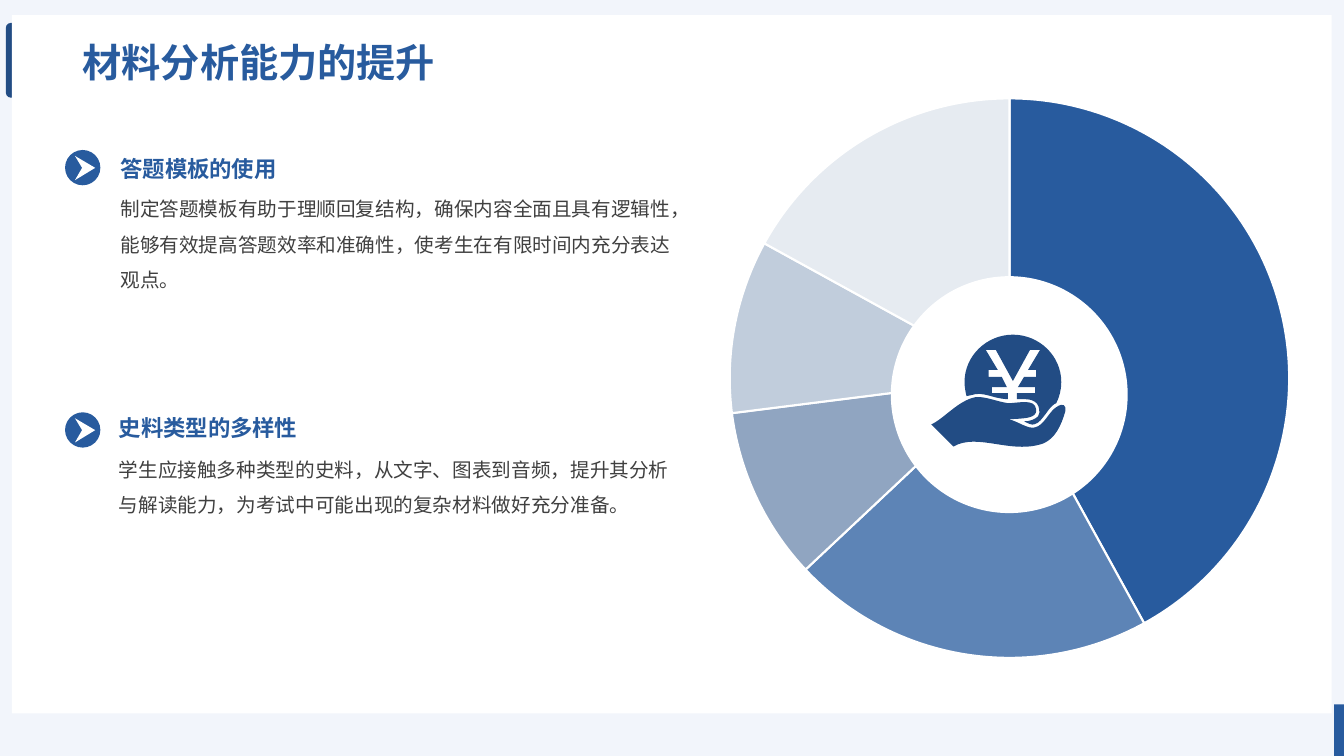
from dataclasses import dataclass

import lxml.etree
import pptx
import pptx.chart.data
import pptx.dml.color
import pptx.enum.chart
import pptx.enum.shapes
import pptx.enum.text
import pptx.oxml
import pptx.oxml.ns
import pptx.util

Cm = pptx.util.Cm
Pt = pptx.util.Pt
SHAPE = pptx.enum.shapes.MSO_SHAPE
qn = pptx.oxml.ns.qn


@dataclass(frozen=True)
class Theme:
    font: str = "Noto Sans CJK SC"
    chart_font: str = "Calibri"
    back: str = "F2F5FB"
    white: str = "FFFFFF"
    blue: str = "285B9E"
    navy: str = "224C84"
    text: str = "404040"
    black: str = "000000"
    title_size: int = 28
    heading_size: int = 16
    body_size: int = 14
    chart_size: int = 10


THEME = Theme()

# Value, colour and opacity in percent
SLICES = [
    (42, THEME.blue, 100),
    (21, THEME.blue, 75),
    (10, THEME.navy, 50),
    (10, THEME.navy, 28),
    (17, THEME.navy, 11),
]

# Left and top of the heading, top of the body, top of the badge, heading, body
TOPICS = [
    (2.78, 3.78, 4.55, 3.78, "答题模板的使用",
     "制定答题模板有助于理顺回复结构，确保内容全面且具有逻辑性，能够有效提高答题效率和准确性，使考生在有限时间内充分表达观点。"),
    (2.74, 10.31, 11.11, 10.39, "史料类型的多样性",
     "学生应接触多种类型的史料，从文字、图表到音频，提升其分析与解读能力，为考试中可能出现的复杂材料做好充分准备。"),
]

# Outlines in hundredths of an inch: a pair is a corner, six numbers are a curve
COIN = [
    (1030, 413), (1031, 411, 1032, 408, 1031, 406), (1030, 396, 1019, 396, 1016, 396),
    (1009, 396), (1009, 390), (1027, 390), (1027, 384), (1010, 384), (1016, 374),
    (1028, 374), (1028, 367), (1020, 367), (1032, 347), (1022, 347), (1005, 378),
    (988, 347), (978, 347), (990, 367), (981, 367), (981, 374), (994, 374),
    (999, 384), (984, 384), (984, 390), (1000, 390), (1000, 396),
    (996, 396, 991, 395, 987, 394), (980, 392, 973, 390, 968, 391),
    (965, 392, 962, 392, 959, 393), (958, 389, 957, 384, 957, 379),
    (957, 353, 979, 332, 1005, 332), (1031, 332, 1053, 353, 1053, 379),
    (1053, 387, 1051, 394, 1048, 400), (1047, 400, 1047, 401, 1046, 401),
    (1043, 403, 1040, 407, 1038, 410), (1034, 415, 1031, 420, 1026, 421),
    (1024, 422, 1020, 420, 1016, 418), (1022, 418, 1027, 416, 1030, 413),
]
HAND = [
    (946, 443), (970, 429, 1003, 451, 1035, 440), (1047, 435, 1053, 422, 1057, 408),
    (1058, 402, 1055, 399, 1048, 404), (1041, 408, 1036, 422, 1027, 424),
    (1020, 426, 1010, 418, 1001, 416), (1013, 415, 1030, 416, 1028, 406),
    (1027, 395, 1010, 400, 1000, 400), (988, 398, 977, 393, 968, 394),
    (951, 397, 936, 416, 924, 421),
]


def rgb(color):
    return pptx.dml.color.RGBColor.from_string(color)


def paint(sp, color):
    sp.shadow.inherit = False
    sp.fill.solid()
    sp.fill.fore_color.rgb = rgb(color)
    sp.line.fill.background()


def add_block(slide, kind, left, top, width, height, color):
    sp = slide.shapes.add_shape(kind, Cm(left), Cm(top), Cm(width), Cm(height))
    paint(sp, color)
    return sp


def send_to_back(slide, sp):
    slide.shapes._spTree.insert(2, sp._element)


def write_text(sp, text, left, top, width, height, size, color, bold=False, spacing=1.0):
    """Move a placeholder and fill it with one formatted paragraph."""
    sp.left, sp.top, sp.width, sp.height = Cm(left), Cm(top), Cm(width), Cm(height)
    tf = sp.text_frame
    tf.word_wrap = True
    tf.auto_size = pptx.enum.text.MSO_AUTO_SIZE.NONE
    tf.vertical_anchor = pptx.enum.text.MSO_ANCHOR.TOP
    p = tf.paragraphs[0]
    p.alignment = pptx.enum.text.PP_ALIGN.LEFT
    p.line_spacing = spacing
    p.space_before = Pt(0)
    props = p._p.get_or_add_pPr()
    props.set("marL", "0")
    props.set("indent", "0")
    lxml.etree.SubElement(props, qn("a:buNone"))
    r = p.add_run()
    r.text = text
    r.font.size = Pt(size)
    r.font.bold = bold
    r.font.color.rgb = rgb(color)
    r.font.name = THEME.font
    lxml.etree.SubElement(r._r.get_or_add_rPr(), qn("a:ea")).set("typeface", THEME.font)


def add_outline(slide, contours, unit, color):
    """Draw closed contours; six numbers make a cubic curve, two a corner."""
    builder = slide.shapes.build_freeform(*contours[0][0], scale=unit)
    for i, contour in enumerate(contours):
        if i:
            builder.move_to(*contour[0])
        points = [part[j:j + 2] for part in contour[1:] for j in range(0, len(part), 2)]
        builder.add_line_segments(points, close=False)
        builder.add_line_segments([], close=True)
    sp = builder.convert_to_shape()
    lines = iter(sp._element.findall(".//" + qn("a:lnTo")))
    for contour in contours:
        for part in contour[1:]:
            steps = [next(lines) for _ in range(len(part) // 2)]
            if len(steps) == 3:
                curve = lxml.etree.Element(qn("a:cubicBezTo"))
                steps[0].addprevious(curve)
                for step in steps:
                    curve.append(step[0])
                    step.getparent().remove(step)
    paint(sp, color)


def add_badge(slide, left, top):
    """Round badge with an arrowhead pointing right."""
    add_block(slide, SHAPE.OVAL, left, top, 0.89, 0.89, THEME.blue)
    head = [(0.25, 0.15), (0.76, 0.45), (0.25, 0.76), (0.43, 0.45)]
    points = [(100 * (left + x), 100 * (top + y)) for x, y in head]
    add_outline(slide, [points], Cm(0.01), THEME.white)


def add_pie(slide, left, top, size):
    data = pptx.chart.data.CategoryChartData()
    data.categories = [str(i + 1) for i in range(len(SLICES))]
    data.add_series("Series 1", [value for value, _, _ in SLICES])
    chart = slide.shapes.add_chart(pptx.enum.chart.XL_CHART_TYPE.PIE, Cm(left), Cm(top),
                                   Cm(size), Cm(size), data).chart
    chart.has_legend = False
    chart.has_title = False
    chart.font.name = THEME.chart_font
    chart.font.size = Pt(THEME.chart_size)
    chart.font.color.rgb = rgb(THEME.black)
    plot = chart.plots[0]
    plot.vary_by_categories = True
    for i, (_, color, _) in enumerate(SLICES):
        form = plot.series[0].points[i].format
        form.fill.solid()
        form.fill.fore_color.rgb = rgb(color)
        form.line.color.rgb = rgb(THEME.white)
        form.line.width = Pt(1.5)
    fills = chart._chartSpace.xpath(".//c:dPt/c:spPr/a:solidFill/a:srgbClr")
    for fill, (_, _, opacity) in zip(fills, SLICES):
        if opacity < 100:
            lxml.etree.SubElement(fill, qn("a:alpha")).set("val", str(opacity * 1000))
    area = chart._chartSpace.find(".//" + qn("c:plotArea"))
    for old in area.findall(qn("c:layout")):
        area.remove(old)
    layout = lxml.etree.Element(qn("c:layout"))
    manual = lxml.etree.SubElement(layout, qn("c:manualLayout"))
    for tag, val in [("layoutTarget", "inner"), ("xMode", "edge"), ("yMode", "edge"),
                     ("x", "0.03"), ("y", "0.03"), ("w", "0.94"), ("h", "0.94")]:
        lxml.etree.SubElement(manual, qn("c:" + tag)).set("val", val)
    area.insert(0, layout)


def main():
    prs = pptx.Presentation()
    prs.slide_width, prs.slide_height = Cm(33.87), Cm(19.05)
    slide = prs.slides.add_slide(prs.slide_layouts.get_by_name("Comparison"))
    slide.background.fill.solid()
    slide.background.fill.fore_color.rgb = rgb(THEME.back)

    panel = add_block(slide, SHAPE.RECTANGLE, 0.3, 0.38, 33.26, 17.6, THEME.white)
    corner = add_block(slide, SHAPE.RECTANGLE, 33.62, 17.75, 0.25, 1.3, THEME.blue)
    tab = add_block(slide, SHAPE.ROUNDED_RECTANGLE, 0.15, 0.58, 0.51, 1.88, THEME.navy)
    tab.adjustments[0] = 0.23
    for sp in (panel, corner, tab):
        send_to_back(slide, sp)

    title, *boxes = slide.placeholders
    write_text(title, "材料分析能力的提升", 1.83, 0.84, 23.04, 1.45,
               size=THEME.title_size, color=THEME.blue, bold=True)
    add_pie(slide, 17.94, 2.03, 15)
    add_block(slide, SHAPE.OVAL, 22.45, 6.96, 5.97, 5.97, THEME.white)
    add_outline(slide, [COIN, HAND], Cm(2.54) / 100, THEME.navy)

    for i, (left, top, body_top, badge_top, heading, body) in enumerate(TOPICS):
        add_badge(slide, 1.64, badge_top)
        write_text(boxes[2 * i], heading, left, top, 14.82, 0.94,
                   size=THEME.heading_size, color=THEME.blue, bold=True)
        write_text(boxes[2 * i + 1], body, left, body_top, 14.82, 4.65,
                   size=THEME.body_size, color=THEME.text, spacing=1.5)
    prs.save("out.pptx")


if __name__ == "__main__":
    main()
